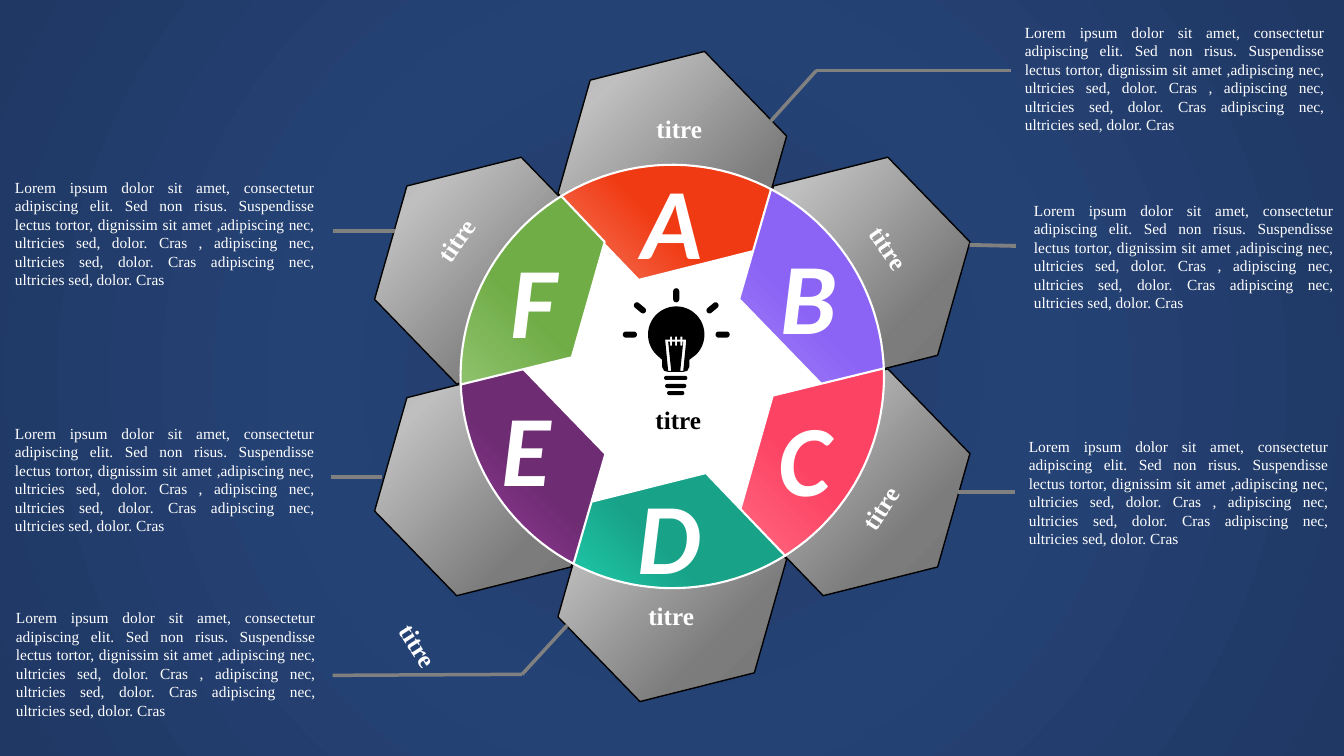
import math
import pptx
import pptx.util
import pptx.dml.color
import pptx.enum.shapes
import pptx.enum.text
import pptx.oxml.ns
import pptx.oxml.xmlchemy

COLORS = {"white": "FFFFFF", "black": "000000", "gray": "808080"}
NIGHT = [(0, "203864"), (46, "254275"), (100, "203864")]
STEEL = [(0, "A6A6A6"), (23, "BFBFBF"), (69, "7C7C7C"), (97, "747474")]
HUB = (6.67, 3.735)
RING = 2.1
TILT = 345.9
BLADES = [
    ("A", "F57F67", "F03A13", (5.96, 1.47)),
    ("B", "A889F7", "8C64F5", (7.32, 2.21)),
    ("C", "FE6E86", "FD4363", (7.28, 3.82)),
    ("D", "20D6B3", "18A288", (5.94, 4.59)),
    ("E", "A442AC", "6E2C73", (4.51, 3.72)),
    ("F", "97C777", "70AD47", (4.59, 2.25)),
]
TITLE = "titre"
TAGS = [
    (6.4, 3.96, 0, "black"),
    (6.41, 1.08, 0, "white"),
    (8.49, 2.26, 55.1, "white"),
    (8.4, 4.84, 303.2, "white"),
    (4.19, 2.18, 304.9, "white"),
    (3.82, 6.2, 57.5, "white"),
    (6.33, 5.91, 0, "white"),
]
LOREM = (
    "Lorem ipsum dolor sit amet, consectetur adipiscing elit. Sed non risus. "
    "Suspendisse lectus tortor, dignissim sit amet ,adipiscing nec, ultricies sed, dolor. "
    "Cras , adipiscing nec, ultricies sed, dolor. Cras adipiscing nec, ultricies sed, dolor. Cras"
)
NOTES = [
    ((10.07, 0.17), 2.5, [(7.64, 1.21), (8.1, 0.7), (10.03, 0.7)]),
    ((10.16, 1.94), 2.75, [(9.62, 2.43), (10.08, 2.44)]),
    ((10.11, 4.28), 2.75, [(9.5, 4.88), (10.07, 4.88)]),
    ((0.06, 5.98), 2.5, [(5.63, 6.2), (5.18, 6.69), (3.3, 6.7)]),
    ((0.05, 4.15), 2.75, [(3.79, 4.73), (3.28, 4.73)]),
    ((0.05, 1.71), 2.75, [(3.92, 2.29), (3.3, 2.29)]),
]
BULB = (6.71, 3.32)
PILLS = [
    ((6.71, 2.89), (6.71, 2.97), 0.03),
    ((6.21, 3.32), (6.29, 3.32), 0.03),
    ((7.13, 3.32), (7.21, 3.32), 0.03),
    ((6.32, 3.03), (6.38, 3.08), 0.03),
    ((7.1, 3.03), (7.04, 3.08), 0.03),
    ((6.61, 3.75), (6.8, 3.75), 0.02),
    ((6.62, 3.83), (6.79, 3.83), 0.02),
    ((6.64, 3.9), (6.77, 3.9), 0.02),
]
TEETH = [6.66, 6.71, 6.76]

PP = pptx.enum.text.PP_ALIGN
MID = pptx.enum.text.MSO_ANCHOR.MIDDLE
FIT = pptx.enum.text.MSO_AUTO_SIZE
KIND = pptx.enum.shapes
NODE = pptx.oxml.xmlchemy.OxmlElement

deck = pptx.Presentation()
deck.slide_width = pptx.util.Cm(33.87)
deck.slide_height = pptx.util.Cm(19.05)
slide = deck.slides.add_slide(deck.slide_layouts[6])


def cm(inches):
    return pptx.util.Cm(inches * 2.54)


def rgb(name):
    return pptx.dml.color.RGBColor.from_string(COLORS.get(name, name))


def blend(fill, root, stops, focus):
    fill.gradient()
    grad = next(root.iter(pptx.oxml.ns.qn("a:gradFill")))
    for part in list(grad):
        grad.remove(part)
    grad.set("rotWithShape", "0")
    row = NODE("a:gsLst")
    for pos, tone in stops:
        stop = NODE("a:gs")
        stop.set("pos", str(pos * 1000))
        shade = NODE("a:srgbClr")
        shade.set("val", tone)
        stop.append(shade)
        row.append(stop)
    track = NODE("a:path")
    track.set("path", "circle")
    rect = NODE("a:fillToRect")
    for side, part in zip("ltrb", focus):
        rect.set(side, str(part * 1000))
    track.append(rect)
    grad.append(row)
    grad.append(track)


def spin(x, y, turn):
    a = math.radians(turn)
    return x * math.cos(a) - y * math.sin(a), x * math.sin(a) + y * math.cos(a)


def arc(center, r, start, end, steps=24):
    angles = [math.radians(start + (end - start) * i / steps) for i in range(steps + 1)]
    return [(center[0] + r * math.cos(a), center[1] + r * math.sin(a)) for a in angles]


def trace(loops):
    build = None
    for loop in loops:
        pts = [(cm(x), cm(y)) for x, y in loop]
        if build is None:
            build = slide.shapes.build_freeform(*pts[0], scale=1.0)
        else:
            build.move_to(*pts[0])
        build.add_line_segments(pts[1:], close=True)
    shape = build.convert_to_shape()
    shape.shadow.inherit = False
    return shape


def outline(shape, color, width):
    shape.line.color.rgb = rgb(color)
    shape.line.width = pptx.util.Pt(width)


def write(box, text, font, size, color, align, wrap=True, bold=False, slant=False):
    frame = box.text_frame
    frame.text = text
    frame.word_wrap = wrap
    para = frame.paragraphs[0]
    para.alignment = align
    face = para.runs[0].font
    face.name, face.size, face.color.rgb = font, pptx.util.Pt(size), rgb(color)
    face.bold, face.italic = bold, slant
    return frame


def textbox(x, y, w, h):
    return slide.shapes.add_textbox(cm(x), cm(y), cm(w), cm(h))


def pill(start, end, r):
    lean = math.degrees(math.atan2(end[1] - start[1], end[0] - start[0]))
    return arc(end, r, lean - 90, lean + 90, 10) + arc(start, r, lean + 90, lean + 270, 10)


def wire():
    top = [p for x in TEETH for p in
           [(x - 0.01, 3.37), (x - 0.01, 3.34), (x + 0.01, 3.34), (x + 0.01, 3.37)]]
    low = [p for x in reversed(TEETH) for p in
           [(x + 0.01, 3.39), (x + 0.01, 3.43), (x - 0.01, 3.43), (x - 0.01, 3.39)]]
    return ([(6.6, 3.37)] + top + [(6.81, 3.37), (6.78, 3.68), (6.75, 3.68), (6.78, 3.39)]
            + low + [(6.63, 3.39), (6.66, 3.68), (6.63, 3.68)])


def main():
    blend(slide.background.fill, slide.element, NIGHT, (50, 50, 50, 50))

    disk = slide.shapes.add_shape(KIND.MSO_SHAPE.OVAL, cm(4.89), cm(1.93), cm(3.55), cm(3.55))
    disk.shadow.inherit = False
    disk.fill.solid()
    disk.fill.fore_color.rgb = rgb("white")
    disk.line.fill.background()

    for i in range(6):
        dx, dy = spin(0, -RING, 60 * i)
        mid = (HUB[0] + dx, HUB[1] + dy)
        petal = trace([arc(mid, 1.17, 0, 300, 5)])
        petal.rotation = TILT
        blend(petal.fill, petal.element, STEEL, (0, 0, 100, 100))
        outline(petal, "black", 1)

    rim = arc(HUB, RING, -108.1, -47.5)
    inner = [(HUB[0] + x, HUB[1] + y) for x, y in [(1.1, -1.01), (-0.09, -1.01)]]
    for i, (letter, light, deep, spot) in enumerate(BLADES):
        blade = trace([rim + inner])
        turn = TILT + 60 * i
        hx, hy = cm(HUB[0]), cm(HUB[1])
        half, tall = blade.width / 2, blade.height / 2
        dx, dy = spin(blade.left + half - hx, blade.top + tall - hy, turn)
        blade.left, blade.top = round(hx + dx - half), round(hy + dy - tall)
        blade.rotation = turn % 360
        blend(blade.fill, blade.element, [(0, light), (46, deep), (100, deep)], (0, 100, 100, 0))
        outline(blade, "white", 1.5)

    neck = [(6.57, 3.57), (6.57, 3.64), (6.59, 3.68), (6.63, 3.69),
            (6.78, 3.69), (6.82, 3.68), (6.84, 3.64), (6.84, 3.57)]
    glass = arc(BULB, 0.28, 135, 405, 40) + neck[::-1]
    icon = trace([glass, wire()] + [pill(*p) for p in PILLS])
    icon.fill.solid()
    icon.fill.fore_color.rgb = rgb("black")
    icon.line.fill.background()

    for letter, light, deep, spot in BLADES:
        frame = write(textbox(*spot, 1.41, 1.41), letter, "Calibri", 72, "white",
                      PP.CENTER, bold=True, slant=True)
        frame.vertical_anchor = MID

    for x, y, turn, color in TAGS:
        box = textbox(x, y, 0.66, 0.4)
        box.rotation = turn
        frame = write(box, TITLE, "Times New Roman", 18, color, PP.CENTER, wrap=False, bold=True)
        frame.auto_size = FIT.SHAPE_TO_FIT_TEXT

    for spot, width, stops in NOTES:
        for start, end in zip(stops, stops[1:]):
            link = slide.shapes.add_connector(
                KIND.MSO_CONNECTOR.STRAIGHT, *[cm(v) for v in start + end])
            outline(link, "gray", width)
            link.element.spPr.append(NODE("a:effectLst"))
        frame = write(textbox(*spot, 3.17, 1.21), LOREM, "Times New Roman", 11, "white", PP.JUSTIFY)
        frame.vertical_anchor = MID
        frame.auto_size = FIT.SHAPE_TO_FIT_TEXT

    deck.save("out.pptx")


if __name__ == "__main__":
    main()
